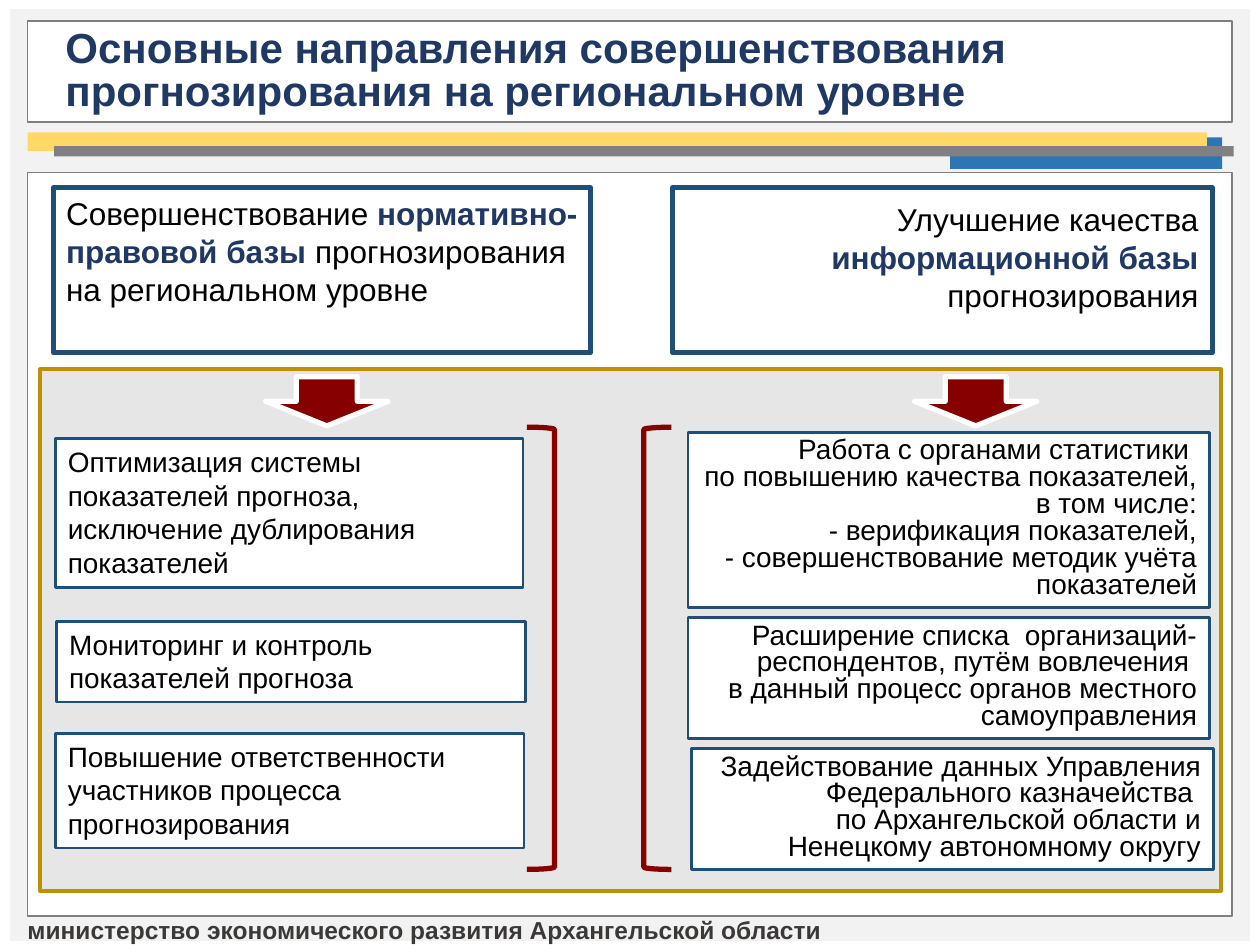
import pptx
import pptx.util
import pptx.dml.color
import pptx.enum.shapes
import pptx.enum.text

Pt = pptx.util.Pt
SHAPES = pptx.enum.shapes.MSO_SHAPE
ALIGN = pptx.enum.text.PP_ALIGN
COLORS = {
    "white": "FFFFFF", "black": "000000", "backdrop": "F2F2F2", "panel": "E7E6E6",
    "frame": "7F7F7F", "gray": "808080", "yellow": "FFD966", "blue": "2E75B6",
    "navy": "203864", "border": "1F4E79", "gold": "BF9000", "red": "860000",
    "footer": "3B3838",
}


def add_box(page, kind, place, fill=None, line=None, weight=1):
    box = page.shapes.add_shape(kind, *[Pt(v) for v in place])
    box.shadow.inherit = False
    if fill:
        box.fill.solid()
        box.fill.fore_color.rgb = pptx.dml.color.RGBColor.from_string(COLORS[fill])
    else:
        box.fill.background()
    if line:
        box.line.color.rgb = pptx.dml.color.RGBColor.from_string(COLORS[line])
        box.line.width = Pt(weight)
    else:
        box.line.fill.background()
    return box


def write(box, paras, size, align=ALIGN.LEFT, spacing=None, wrap=True):
    """Each paragraph is a list of (text, color, bold); a newline is a line break."""
    frame = box.text_frame
    frame.word_wrap = wrap
    frame.auto_size = pptx.enum.text.MSO_AUTO_SIZE.NONE
    frame.vertical_anchor = pptx.enum.text.MSO_ANCHOR.TOP
    for i, spans in enumerate(paras):
        para = frame.add_paragraph() if i else frame.paragraphs[0]
        para.alignment = align
        para.space_before = Pt(0)
        if spacing:
            para.line_spacing = spacing
        for text, color, bold in spans:
            for j, part in enumerate(text.split("\n")):
                if j:
                    para.add_line_break()
                span = para.add_run()
                span.text = part
                span.font.name = "Arial"
                span.font.size = Pt(size)
                span.font.bold = bold
                span.font.color.rgb = pptx.dml.color.RGBColor.from_string(COLORS[color])


deck = pptx.Presentation()
deck.slide_width, deck.slide_height = Pt(720), Pt(540)
page = deck.slides.add_slide(deck.slide_layouts[5])

# Backdrop, title frame and colour bars
process = SHAPES.FLOWCHART_PROCESS
add_box(page, process, (5.8, 5, 708.5, 532.8), "backdrop")
add_box(page, process, (15.8, 12.2, 688.3, 57.6), "white", "frame")
add_box(page, SHAPES.RECTANGLE, (542.9, 78.5, 155.5, 18), "blue")
add_box(page, SHAPES.RECTANGLE, (15.8, 75.6, 673.9, 10.8), "yellow")
add_box(page, SHAPES.RECTANGLE, (31, 83.5, 673.9, 5.8), "gray")

# Title, brought in front of its frame
title = page.shapes.title
title.element.getparent().append(title.element)
title.left, title.top, title.width, title.height = Pt(30.2), Pt(13), Pt(639.4), Pt(56.9)
write(title, [[("Основные направления совершенствования прогнозирования на региональном уровне",
                "navy", True)]], 24, spacing=0.85)

# Main frame and footer
add_box(page, process, (15.8, 98.6, 688.3, 424.8), "white", "frame")
footer = page.shapes.add_textbox(Pt(8.6), Pt(519.1), Pt(470.9), Pt(24.5))
write(footer, [[("министерство экономического развития Архангельской области",
                 "footer", True)]], 14, wrap=False)

# Heads of the two columns
left_head = add_box(page, SHAPES.RECTANGLE, (30.7, 107.3, 306.7, 94.3), None, "border", 3)
write(left_head, [[("Совершенствование ", "black", False),
                   ("нормативно-правовой базы ", "navy", True),
                   ("прогнозирования на региональном уровне", "black", False)]], 18)
add_box(page, SHAPES.RECTANGLE, (384.5, 107.3, 308.2, 94.3), None, "border", 3)
right_head = page.shapes.add_textbox(Pt(383.8), Pt(110.9), Pt(308.2), Pt(72.7))
write(right_head, [[("Улучшение качества ", "black", False),
                    ("информационной базы ", "navy", True),
                    ("прогнозирования", "black", False)]], 18, ALIGN.RIGHT)

# Panel with arrows and brackets
add_box(page, SHAPES.RECTANGLE, (23, 211, 674.6, 298.1), "panel", "gold", 2.25)
for left in (151.9, 522.7):
    add_box(page, SHAPES.DOWN_ARROW, (left, 215.3, 69.8, 28.1), "red", "white", 3)
for left, turn in ((301, 0), (367.9, 180)):
    bracket = add_box(page, SHAPES.RIGHT_BRACKET, (left, 244.1, 15.8, 252.7), None, "red", 3)
    bracket.rotation = turn

# Items: left, top, width, height, paragraphs
left_items = [
    (31.7, 250.6, 267.1, 85,
     ["Оптимизация системы показателей прогноза, \nисключение дублирования показателей"]),
    (32.4, 355, 267.8, 46.1, ["Мониторинг и контроль показателей прогноза"]),
    (31.7, 419, 267.8, 65.5, ["Повышение ответственности участников процесса прогнозирования"]),
]
right_items = [
    (393.1, 247, 298.1, 100.1,
     ["Работа с органами статистики \nпо повышению качества показателей, в том числе:\n"
      "- верификация показателей,\n- совершенствование методик учёта показателей"]),
    (393.1, 352.8, 298.1, 69.1,
     ["Расширение списка  организаций-респондентов, путём вовлечения ",
      "в данный процесс органов местного самоуправления"]),
    (395.3, 427.7, 298.1, 69.1,
     ["Задействование данных Управления Федерального казначейства \n"
      "по Архангельской области и Ненецкому автономному округу"]),
]
for items, align, spacing in ((left_items, ALIGN.LEFT, None), (right_items, ALIGN.RIGHT, 0.8)):
    for *place, texts in items:
        item = add_box(page, SHAPES.RECTANGLE, place, "white", "border", 1.5)
        write(item, [[(text, "black", False)] for text in texts], 16, align, spacing)

deck.save("out.pptx")
